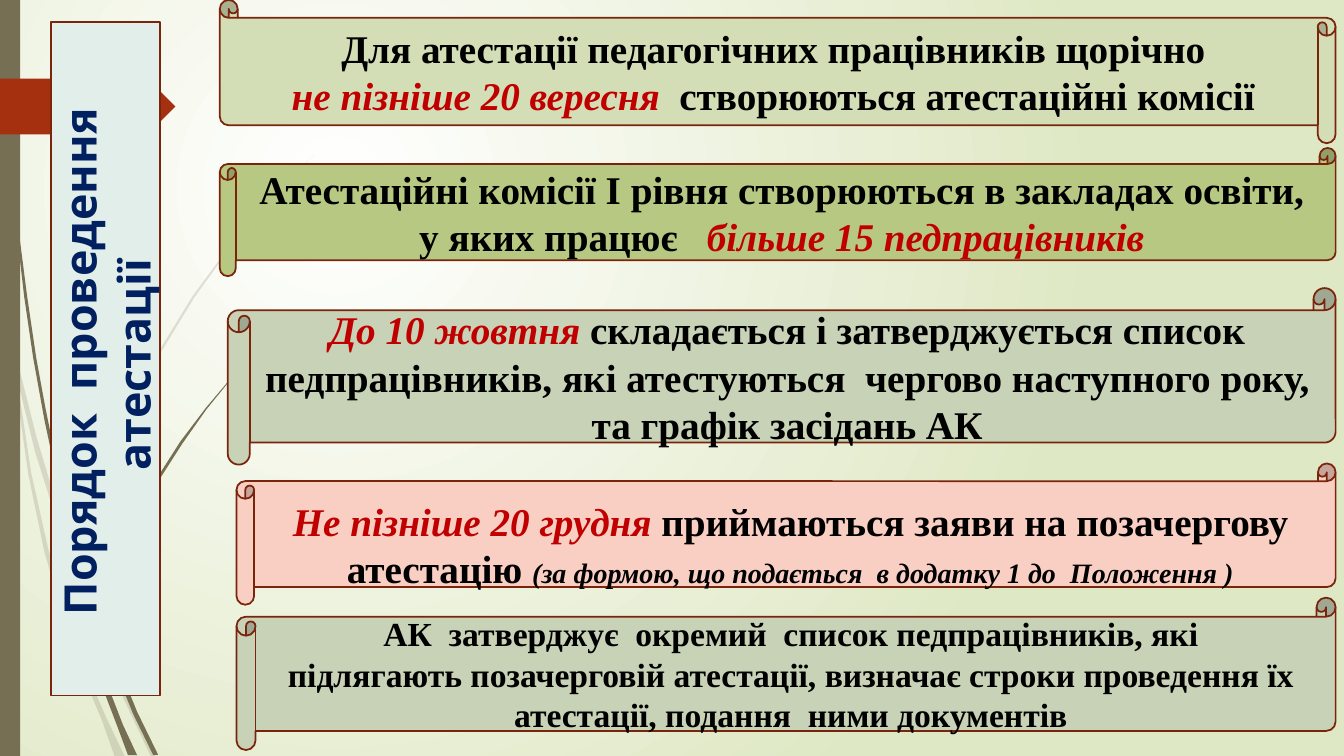
from lxml.etree import SubElement
from pptx import Presentation
from pptx.dml.color import RGBColor
from pptx.enum.shapes import MSO_SHAPE
from pptx.enum.text import MSO_ANCHOR, PP_ALIGN
from pptx.oxml.ns import qn
from pptx.util import Cm, Pt

TINT = {
    "white": "FFFFFF", "lime": "DFE8C4", "stem": "766F54", "rust": "A53010",
    "edge": "7A240C", "ice": "E1EEE9", "navy": "002060", "black": "000000",
    "red": "C00000", "pale": "D4DEB6", "olive": "B6C882", "sage": "C7D2B7",
    "rose": "F9CFC3",
}
SERIF = "Times New Roman"


def paint(shape, fill, edge=None):
    shape.shadow.inherit = False
    shape.fill.solid()
    shape.fill.fore_color.rgb = RGBColor.from_string(TINT[fill])
    if edge:
        shape.line.color.rgb = RGBColor.from_string(TINT[edge])
        shape.line.width = Pt(1.25)
    else:
        shape.line.fill.background()


def write(para, text, size, color="black", bold=True, slant=False, face=SERIF):
    """Add one styled run to a centred paragraph."""
    para.alignment = PP_ALIGN.CENTER
    run = para.add_run()
    run.text = text
    font = run.font
    font.name, font.size, font.bold, font.italic = face, Pt(size), bold, slant
    font.color.rgb = RGBColor.from_string(TINT[color])


deck = Presentation()
deck.slide_width, deck.slide_height = Cm(33.87), Cm(19.05)
slide = deck.slides.add_slide(deck.slide_layouts[6])
shapes = slide.shapes

# Backdrop: round glow, white in the upper left
back = slide.background.fill
back.gradient()
for stop, name in zip(back.gradient_stops, ("white", "lime")):
    stop.color.rgb = RGBColor.from_string(TINT[name])
glow = slide.background._cSld.find(".//" + qn("a:gradFill"))
glow.remove(glow.find(qn("a:lin")))
ring = SubElement(glow, qn("a:path"), {"path": "circle"})
SubElement(ring, qn("a:fillToRect"),
           {"l": "50000", "t": "50000", "r": "100000", "b": "100000"})

# Grass blades: opacity in percent, outline in units of 0.0254 cm
blades = [
    (20, [(0, 282), (9, 322), (11, 350), (17, 376), (31, 469), (48, 545),
          (70, 619), (93, 683), (105, 711), (124, 751), (114, 751), (101, 714),
          (92, 693), (65, 621), (44, 547), (28, 470), (11, 350), (0, 299)]),
    (20, [(14, 345), (36, 433), (62, 520), (85, 586), (92, 607), (127, 692),
          (155, 751), (150, 751), (123, 694), (88, 610), (84, 599), (58, 522),
          (35, 449), (17, 376)]),
    (20, [(85, 586), (92, 521), (107, 461), (130, 403), (158, 348), (191, 294),
          (228, 244), (268, 197), (312, 153), (268, 198), (229, 245),
          (193, 295), (160, 349), (133, 404), (110, 462), (95, 522),
          (88, 584), (88, 596)]),
    (100, [(3, 0), (4, 48), (7, 110), (17, 233), (24, 294), (33, 355),
           (44, 416), (57, 477), (68, 557), (93, 659), (117, 722), (127, 749),
           (136, 749), (122, 719), (98, 657), (72, 556), (64, 505), (55, 453),
           (45, 404), (36, 355), (27, 294), (19, 232), (8, 109), (5, 48),
           (4, 0)]),
    (100, [(110, 641), (113, 649), (136, 706), (157, 749), (152, 749),
           (132, 708), (111, 656)]),
    (100, [(106, 631), (111, 590), (122, 551), (137, 511), (156, 474),
           (179, 438), (204, 405), (231, 373), (260, 344), (231, 374),
           (205, 406), (181, 440), (158, 476), (140, 513), (125, 552),
           (115, 592), (111, 633)]),
]
for shade, spots in blades:
    pen = shapes.build_freeform(*spots[0], scale=Cm(0.0254))
    pen.add_line_segments(spots[1:])
    blade = pen.convert_to_shape()
    paint(blade, "stem")
    if shade < 100:
        hue = blade.fill._xPr.find(".//" + qn("a:srgbClr"))
        SubElement(hue, qn("a:alpha"), {"val": str(shade * 1000)})

bar = shapes.add_shape(MSO_SHAPE.RECTANGLE, 0, 0, Cm(0.51), Cm(19.05))
paint(bar, "stem")
arrow = shapes.add_shape(MSO_SHAPE.PENTAGON, 0, Cm(1.98), Cm(4.42), Cm(1.41))
paint(arrow, "rust")

# Upright title
title = shapes.add_shape(MSO_SHAPE.RECTANGLE, Cm(-5.82), Cm(7.67),
                         Cm(16.97), Cm(2.74))
title.rotation = 270
paint(title, "ice", "edge")
title.text_frame.word_wrap = True
title.text_frame.vertical_anchor = MSO_ANCHOR.MIDDLE
head = title.text_frame.paragraphs[0]
write(head, " ", 18, "white", False, face="League Spartan")
write(head, "Порядок  проведення  атестації ", 32, "navy", face="League Spartan")

# Scrolls: left, top, height, fill, paragraphs of runs; None breaks the line
right = 33.66
scrolls = [
    (5.54, 0, 3.61, "pale", [
        [(" ", 28, "black", False),
         ("Для атестації педагогічних працівників щорічно ", 28)],
        [("не пізніше 20 вересня  ", 28, "red", True, True),
         ("створюються атестаційні комісії", 28)]]),
    (5.54, 3.73, 3.23, "olive", [
        [("Атестаційні комісії I рівня створюються в закладах освіти, "
          "у яких працює   ", 28),
         ("більше 15 педпрацівників", 28, "red", True, True)]]),
    (5.74, 7.26, 4.45, "sage", [
        [("До 10 жовтня ", 28, "red", True, True),
         ("складається і затверджується список педпрацівників, які "
          "атестуються  чергово наступного року, та графік засідань АК", 28)]]),
    (5.96, 11.68, 3.56, "rose", [
        [("Не пізніше 20 грудня ", 28, "red", True, True),
         ("приймаються заяви на позачергову атестацію ", 28),
         ("(за формою, що подається  в додатку 1 до  Положення )", 20,
          "black", True, True)]]),
    (5.96, 15.06, 3.84, "sage", [
        [("АК  затверджує  окремий  список педпрацівників, які", 24), None,
         ("підлягають позачерговій атестації, визначає строки проведення їх "
          "атестації, подання  ними документів", 24)]]),
]
for left, top, height, fill, paras in scrolls:
    scroll = shapes.add_shape(MSO_SHAPE.HORIZONTAL_SCROLL, Cm(left), Cm(top),
                              Cm(right - left), Cm(height))
    paint(scroll, fill, "edge")
    frame = scroll.text_frame
    frame.word_wrap = True
    frame.vertical_anchor = MSO_ANCHOR.MIDDLE
    if fill == "pale":
        scroll._element.spPr.find(qn("a:xfrm")).set("flipH", "1")
    if fill == "rose":
        frame.margin_top = Cm(0.64)
    for row, runs in enumerate(paras):
        para = frame.add_paragraph() if row else frame.paragraphs[0]
        for run in runs:
            if run:
                write(para, *run)
            else:
                para.add_line_break()

deck.save("out.pptx")
